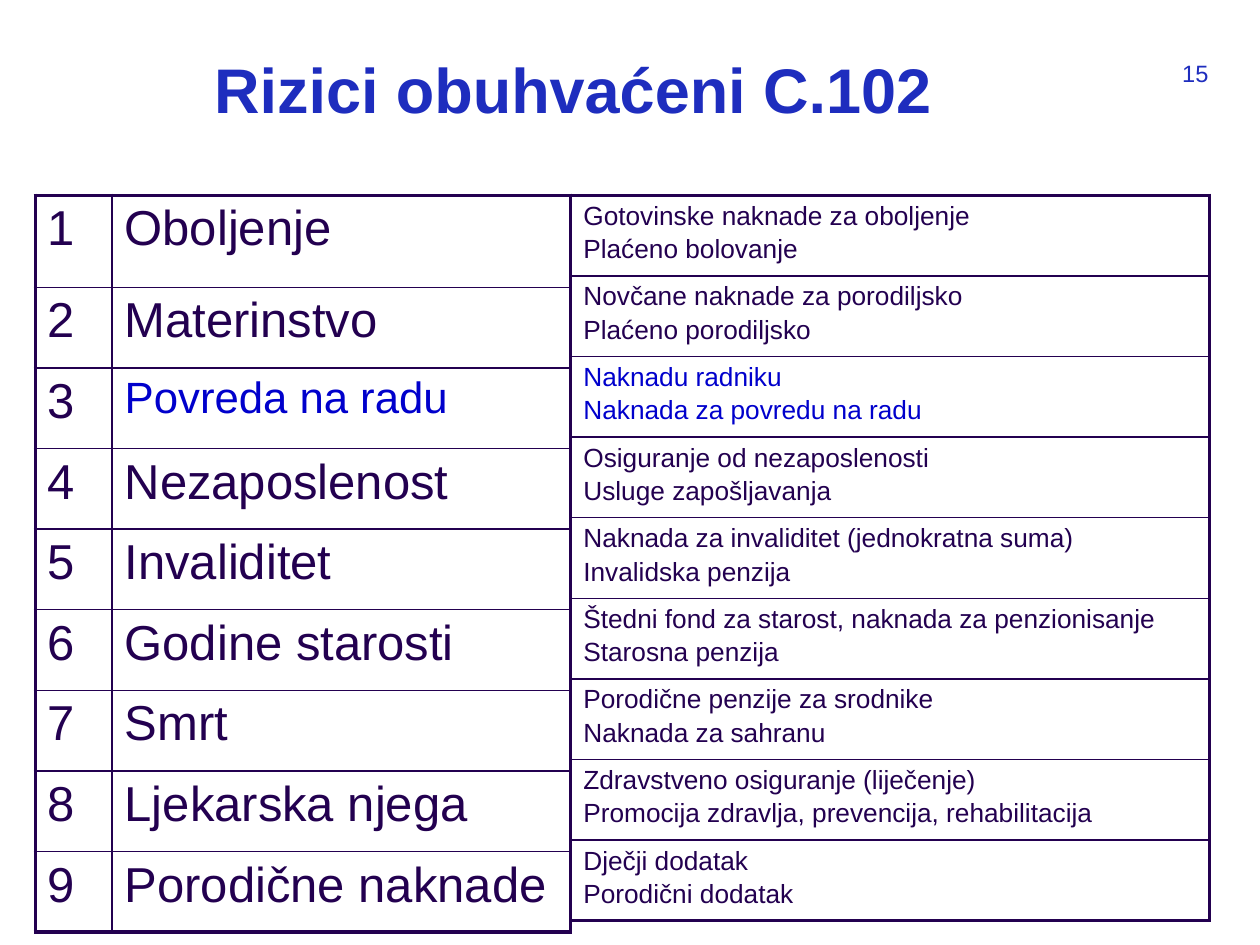
from dataclasses import dataclass

from lxml import etree
from pptx import Presentation
from pptx.dml.color import RGBColor
from pptx.enum.text import PP_ALIGN
from pptx.oxml.ns import qn
from pptx.util import Inches, Pt

LEFT, RIGHT = PP_ALIGN.LEFT, PP_ALIGN.RIGHT
INK, BLUE, TITLE_BLUE = "230050", "0000CC", "1E2DBE"
TABLE_TOP, ROW_HEIGHT, FIRST_ROW_HEIGHT = 1.55, 0.64, 0.73
THICK, THIN = 2.25, 1


@dataclass
class Style:
    size: float
    color: str = INK
    bold: bool = False


@dataclass
class Risk:
    name: str
    benefits: tuple[str, str]
    highlighted: bool = False


RISKS = [
    Risk("Oboljenje", ("Gotovinske naknade za oboljenje", "Plaćeno bolovanje")),
    Risk("Materinstvo", ("Novčane naknade za porodiljsko", "Plaćeno porodiljsko")),
    Risk("Povreda na radu", ("Naknadu radniku", "Naknada za povredu na radu"), True),
    Risk("Nezaposlenost", ("Osiguranje od nezaposlenosti", "Usluge zapošljavanja")),
    Risk("Invaliditet", ("Naknada za invaliditet (jednokratna suma)", "Invalidska penzija")),
    Risk("Godine starosti",
         ("Štedni fond za starost, naknada za penzionisanje", "Starosna penzija")),
    Risk("Smrt", ("Porodične penzije za srodnike", "Naknada za sahranu")),
    Risk("Ljekarska njega",
         ("Zdravstveno osiguranje (liječenje)", "Promocija zdravlja, prevencija, rehabilitacija")),
    Risk("Porodične naknade", ("Dječji dodatak", "Porodični dodatak")),
]


def rgb(color: str) -> RGBColor:
    return RGBColor.from_string(color)


def write(frame, lines: tuple[str, ...], style: Style, align=LEFT) -> None:
    for index, line in enumerate(lines):
        para = frame.paragraphs[0] if index == 0 else frame.add_paragraph()
        para.alignment = align
        if index:
            para.space_before = Pt(2.4)
        span = para.add_run()
        span.text = line
        formats = {"name": "Arial", "size": Pt(style.size), "bold": style.bold}
        for name, value in formats.items():
            setattr(span.font, name, value)
        span.font.color.rgb = rgb(style.color)


def add_label(page, bounds: tuple, text: str, style: Style, align=LEFT):
    box = page.shapes.add_textbox(*map(Inches, bounds))
    frame = box.text_frame
    frame.word_wrap = True
    for side in ("left", "top", "right", "bottom"):
        setattr(frame, f"margin_{side}", 0)
    write(frame, (text,), style, align)
    return frame


def set_borders(cell, widths: dict[str, float]) -> None:
    properties = cell._tc.get_or_add_tcPr()
    for index, (side, width) in enumerate(widths.items()):
        line = etree.Element(qn(f"a:ln{side}"), w=str(Pt(width)))
        fill = etree.SubElement(line, qn("a:solidFill"))
        etree.SubElement(fill, qn("a:srgbClr"), val=INK)
        properties.insert(index, line)


def add_grid(page, left: float, widths: list[float], heights: list[float],
             rows: list[list[tuple[tuple[str, ...], Style]]]) -> None:
    bounds = (left, TABLE_TOP, sum(widths), sum(heights))
    table = page.shapes.add_table(len(rows), len(widths), *map(Inches, bounds)).table
    table.first_row = table.horz_banding = False
    for column, width in zip(table.columns, widths):
        column.width = Inches(width)
    for row, height in zip(table.rows, heights):
        row.height = Inches(height)
    last_row, last_column = len(rows) - 1, len(widths) - 1
    for r, row in enumerate(rows):
        for c, (lines, style) in enumerate(row):
            cell = table.cell(r, c)
            cell.fill.background()
            write(cell.text_frame, lines, style)
            outer = {"L": c == 0, "R": c == last_column, "T": r == 0, "B": r == last_row}
            set_borders(cell, {side: THICK if edge else THIN for side, edge in outer.items()})


def main() -> None:
    """Build the slide of risks covered by C.102 and their benefits."""
    deck = Presentation()
    deck.slide_width, deck.slide_height = Inches(10), Inches(7.5)
    page = deck.slides.add_slide(deck.slide_layouts[6])

    title = add_label(page, (1.7, 0.47, 8.5, 1.18), "Rizici obuhvaćeni C.102",
                      Style(36, TITLE_BLUE, True))
    title.paragraphs[0].line_spacing = 0.9
    add_label(page, (9.15, 0.47, 0.44, 0.31), "15", Style(13.5, TITLE_BLUE), RIGHT)

    large, small = Style(28), Style(15)
    risk_rows, benefit_rows = [], []
    for number, risk in enumerate(RISKS, 1):
        name_style = Style(25, BLUE) if risk.highlighted else large
        benefit_style = Style(15, BLUE) if risk.highlighted else small
        risk_rows.append([((str(number),), large), ((risk.name,), name_style)])
        benefit_rows.append([(risk.benefits, benefit_style)])

    heights = [ROW_HEIGHT] * len(RISKS)
    add_grid(page, 0.28, [0.61, 3.64], [FIRST_ROW_HEIGHT] + heights[1:], risk_rows)
    add_grid(page, 4.53, [5.07], heights, benefit_rows)
    deck.save("out.pptx")


if __name__ == "__main__":
    main()
